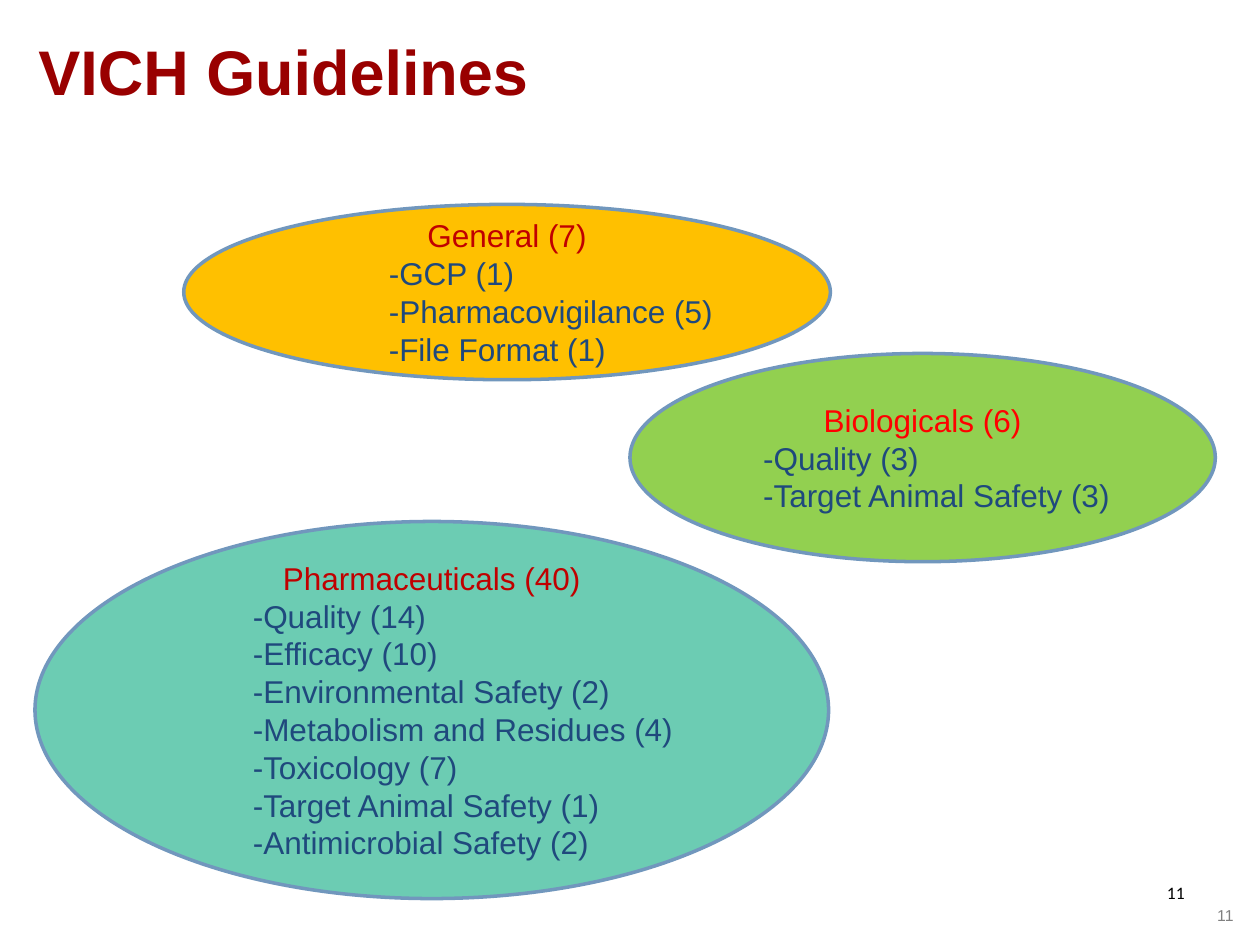
from pptx import Presentation
from pptx.dml.color import RGBColor
from pptx.enum.shapes import MSO_SHAPE
from pptx.enum.text import MSO_ANCHOR, PP_ALIGN
from pptx.util import Pt

COLORS = {
    "title": "990000", "head": "C00000", "bright": "FF0000",
    "item": "1F497D", "edge": "7197BD", "teal": "6CCCB3",
    "gold": "FFC000", "green": "92D050", "gray": "808080", "black": "000000",
}


def tint(name):
    return RGBColor.from_string(COLORS[name])


def write(para, text, size=18, color="item", font="Arial", bold=False,
          align=PP_ALIGN.LEFT, indent=0):
    para.text = text
    para.alignment = align
    props = para._p.get_or_add_pPr()
    props.set("marL", str(Pt(indent)))
    props.set("indent", "0")
    para.font.name = font
    para.font.size = Pt(size)
    para.font.bold = bold
    para.font.color.rgb = tint(color)


class Deck:
    def __init__(self, edge="edge", weight=2):
        self.edge = edge
        self.weight = weight
        self.show = Presentation()
        self.show.slide_width = Pt(720)
        self.show.slide_height = Pt(540)
        self.slide = self.show.slides.add_slide(self.show.slide_layouts[5])

    def title(self, text, box):
        shape = self.slide.shapes.title
        shape.left, shape.top, shape.width, shape.height = map(Pt, box)
        frame = shape.text_frame
        frame.word_wrap = True
        frame.vertical_anchor = MSO_ANCHOR.MIDDLE
        write(frame.paragraphs[0], text, size=36, color="title", bold=True,
              align=PP_ALIGN.CENTER)

    def label(self, text, box, **style):
        frame = self.slide.shapes.add_textbox(*map(Pt, box)).text_frame
        frame.word_wrap = True
        write(frame.paragraphs[0], text, align=PP_ALIGN.RIGHT, **style)

    def oval(self, head, items, box, fill, indent, color="head"):
        shape = self.slide.shapes.add_shape(MSO_SHAPE.OVAL, *map(Pt, box))
        shape.shadow.inherit = False
        shape.fill.solid()
        shape.fill.fore_color.rgb = tint(fill)
        shape.line.color.rgb = tint(self.edge)
        shape.line.width = Pt(self.weight)
        frame = shape.text_frame
        frame.word_wrap = True
        frame.vertical_anchor = MSO_ANCHOR.MIDDLE
        write(frame.paragraphs[0], head, color=color, align=PP_ALIGN.CENTER)
        for item in items:
            write(frame.add_paragraph(), f"-{item}", indent=indent)


def main():
    deck = Deck()
    deck.label("11", (678, 514, 34, 23), size=9, color="gray")
    deck.title("VICH Guidelines", (2, 14.5, 320, 51))
    deck.label("11", (516, 500.5, 168, 29), size=10, color="black", font="Calibri")
    deck.oval("Pharmaceuticals (40)",
              ["Quality (14)", "Efficacy (10)", "Environmental Safety (2)",
               "Metabolism and Residues (4)", "Toxicology (7)",
               "Target Animal Safety (1)", "Antimicrobial Safety (2)"],
              (20, 298, 453.5, 215.5), "teal", 51)
    deck.oval("General (7)",
              ["GCP (1)", "Pharmacovigilance (5)", "File Format (1)"],
              (105, 116.8, 369.5, 100.2), "gold", 56)
    deck.oval("Biologicals (6)", ["Quality (3)", "Target Animal Safety (3)"],
              (360, 202, 334.5, 119), "green", 20, color="bright")
    deck.show.save("out.pptx")


if __name__ == "__main__":
    main()
